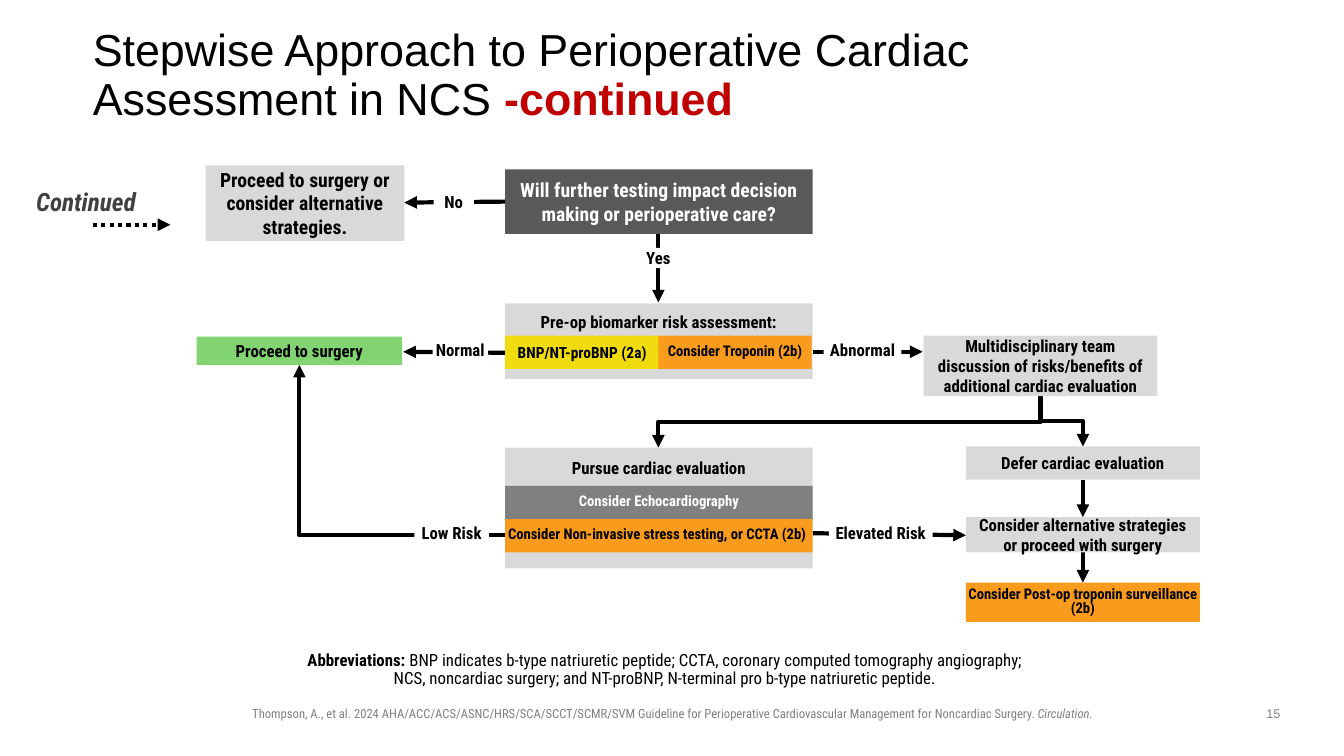
import pptx
import pptx.util
import pptx.dml.color
import pptx.enum.dml
import pptx.enum.shapes
import pptx.enum.text
import pptx.oxml.ns
from lxml import etree

Inches = pptx.util.Inches
Pt = pptx.util.Pt
RGBColor = pptx.dml.color.RGBColor
ALIGN = pptx.enum.text.PP_ALIGN
ANCHOR = pptx.enum.text.MSO_ANCHOR
CONNECTOR = pptx.enum.shapes.MSO_CONNECTOR

BLACK = RGBColor(0x00, 0x00, 0x00)
WHITE = RGBColor(0xFF, 0xFF, 0xFF)
CHARCOAL = RGBColor(0x40, 0x40, 0x40)
DARK_GRAY = RGBColor(0x59, 0x59, 0x59)
MID_GRAY = RGBColor(0x80, 0x80, 0x80)
LIGHT_GRAY = RGBColor(0xD9, 0xD9, 0xD9)
GREEN = RGBColor(0x82, 0xD4, 0x72)
YELLOW = RGBColor(0xF0, 0xDB, 0x0E)
ORANGE = RGBColor(0xF9, 0x9B, 0x1D)
RED = RGBColor(0xC0, 0x00, 0x00)

BODY_FONT = "Roboto Condensed"
TITLE_FONT = "Arial"

# Columns and rows shared by the flowchart
CENTER_X, CENTER_W = 5.01, 3.05
RIGHT_X, RIGHT_W = 9.58, 2.32
CENTER_MID = 6.53
RIGHT_MID = RIGHT_X + RIGHT_W / 2
TEAM_X = 9.16
TEAM_MID = TEAM_X + RIGHT_W / 2
BAR_H = 0.33
BIOMARKER_Y = 3.33


def style_font(font, size, color, bold=False, italic=False, name=BODY_FONT):
    font.name, font.size = name, Pt(size)
    font.color.rgb = color
    font.bold, font.italic = bold, italic


def set_margins(frame, left, top, right, bottom):
    frame.margin_left, frame.margin_top = Inches(left), Inches(top)
    frame.margin_right, frame.margin_bottom = Inches(right), Inches(bottom)


def add_styled_run(paragraph, text, *style, **options):
    run = paragraph.add_run()
    run.text = text
    style_font(run.font, *style, **options)


def add_box(slide, place, text, fill, size=12, color=BLACK, tight=False, top_inset=None):
    """Filled box; tight drops the margins, top_inset hangs the text from the top."""
    box = slide.shapes.add_shape(
        pptx.enum.shapes.MSO_SHAPE.RECTANGLE, *map(Inches, place))
    box.shadow.inherit = False
    box.fill.solid()
    box.fill.fore_color.rgb = fill
    box.line.fill.background()
    frame = box.text_frame
    frame.word_wrap = True
    frame.text = text
    frame.vertical_anchor = ANCHOR.MIDDLE
    if tight:
        set_margins(frame, 0, 0, 0, 0)
    if top_inset is not None:
        frame.vertical_anchor = ANCHOR.TOP
        frame.margin_top = Inches(top_inset)
    paragraph = frame.paragraphs[0]
    paragraph.alignment = ALIGN.CENTER
    style_font(paragraph.runs[0].font, size, color, bold=True)
    return box


def add_option(slide, place, text, fill, color=BLACK):
    """Bar with a graded recommendation, in smaller and closer type."""
    option = add_box(slide, place, text, fill, 10.5, color, tight=True)
    option.text_frame.paragraphs[0].line_spacing = 0.8


def add_label(slide, left, top, width, text):
    add_box(slide, (left, top, width, 0.2), text, WHITE, tight=True, top_inset=0)


def add_arrow(slide, start, end, kind=CONNECTOR.STRAIGHT):
    arrow = slide.shapes.add_connector(kind, *map(Inches, (*start, *end)))
    arrow.line.color.rgb = BLACK
    arrow.line.width = Pt(3)
    properties = arrow._element.spPr
    head = etree.SubElement(arrow.line._get_or_add_ln(), pptx.oxml.ns.qn("a:tailEnd"))
    head.set("type", "triangle")
    etree.SubElement(properties, pptx.oxml.ns.qn("a:effectLst"))
    return arrow


def add_drop_arrow(slide, start, end):
    """Elbow that runs down, across and down: a quarter-turned elbow connector."""
    mid_x, mid_y = (start[0] + end[0]) / 2, (start[1] + end[1]) / 2
    half_x, half_y = (end[0] - start[0]) / 2, (end[1] - start[1]) / 2
    arrow = add_arrow(slide, (mid_x - half_y, mid_y + half_x),
                      (mid_x + half_y, mid_y - half_x), CONNECTOR.ELBOW)
    arrow._element.spPr.find(pptx.oxml.ns.qn("a:xfrm")).set("rot", "5400000")


def add_corner_arrow(slide, start, end):
    """Elbow with one corner: across, then up."""
    arrow = add_arrow(slide, start, end, CONNECTOR.ELBOW)
    geometry = arrow._element.spPr.find(pptx.oxml.ns.qn("a:prstGeom"))
    geometry.set("prst", "bentConnector2")


def add_text(slide, place, align=ALIGN.CENTER):
    text_box = slide.shapes.add_textbox(*map(Inches, place))
    text_box.text_frame.word_wrap = True
    paragraph = text_box.text_frame.paragraphs[0]
    paragraph.alignment = align
    return text_box.text_frame, paragraph


def add_title(slide):
    title = slide.shapes.title
    title.left, title.top = Inches(0.92), Inches(0.4)
    title.width, title.height = Inches(9.41), Inches(0.72)
    frame = title.text_frame
    frame.word_wrap = True
    frame.auto_size = pptx.enum.text.MSO_AUTO_SIZE.NONE
    frame.vertical_anchor = ANCHOR.MIDDLE
    set_margins(frame, 0, 0, 0, 0)
    paragraph = frame.paragraphs[0]
    paragraph.alignment = ALIGN.LEFT
    paragraph.line_spacing = 0.9
    add_styled_run(paragraph, "Stepwise Approach to Perioperative Cardiac Assessment in NCS ",
                   32, BLACK, name=TITLE_FONT)
    add_styled_run(paragraph, "-continued", 32, RED, bold=True, name=TITLE_FONT)


def add_arrows(slide):
    add_arrow(slide, (CENTER_MID, 2.32), (CENTER_MID, 3))
    add_arrow(slide, (CENTER_X, 2), (4.01, 2.01))
    add_arrow(slide, (CENTER_X, 3.5), (4, 3.49))
    add_arrow(slide, (8.06, 3.49), (9.15, 3.49))
    add_arrow(slide, (8.06, 5.29), (RIGHT_X, 5.31))
    add_arrow(slide, (RIGHT_MID, 4.76), (RIGHT_MID, 5.13))
    add_arrow(slide, (RIGHT_MID, 5.48), (RIGHT_MID, 5.78))
    add_drop_arrow(slide, (TEAM_MID, 3.93), (CENTER_MID, 4.44))
    add_drop_arrow(slide, (TEAM_MID, 3.93), (RIGHT_MID, 4.43))
    add_corner_arrow(slide, (CENTER_X, 5.31), (2.97, 3.62))
    continued_arrow = add_arrow(slide, (0.92, 2.23), (1.69, 2.23))
    continued_arrow.line.dash_style = pptx.enum.dml.MSO_LINE.ROUND_DOT


def add_steps(slide):
    # Decision on further testing
    add_box(slide, (CENTER_X, 1.68, CENTER_W, 0.64),
            "Will further testing impact decision making or perioperative care?",
            DARK_GRAY, 14, WHITE)
    add_box(slide, (2.04, 1.64, 1.97, 0.75),
            "Proceed to surgery or consider alternative strategies.", LIGHT_GRAY, 14)

    # Biomarkers
    add_box(slide, (CENTER_X, 3.01, CENTER_W, 0.75), "Pre-op biomarker risk assessment:",
            LIGHT_GRAY, top_inset=0.08)
    add_box(slide, (CENTER_X, BIOMARKER_Y, 1.53, BAR_H), "BNP/NT-proBNP (2a)", YELLOW, 11)
    add_option(slide, (CENTER_MID, BIOMARKER_Y, 1.52, BAR_H), "Consider Troponin (2b)", ORANGE)
    add_box(slide, (1.95, 3.34, 2.04, 0.28), "Proceed to surgery", GREEN)
    add_box(slide, (TEAM_X, 3.33, RIGHT_W, 0.6),
            "Multidisciplinary team discussion of risks/benefits of additional cardiac evaluation",
            LIGHT_GRAY)

    # Cardiac evaluation
    add_box(slide, (CENTER_X, 4.44, CENTER_W, 1.2), "Pursue cardiac evaluation",
            LIGHT_GRAY, top_inset=0.1)
    add_option(slide, (CENTER_X, 4.82, CENTER_W, BAR_H), "Consider Echocardiography",
               MID_GRAY, WHITE)
    add_option(slide, (CENTER_X, 4.82 + BAR_H, CENTER_W, BAR_H),
               "Consider Non-invasive stress testing, or CCTA (2b) ", ORANGE)

    # Deferred evaluation
    add_box(slide, (RIGHT_X, 4.43, RIGHT_W, BAR_H), "Defer cardiac evaluation", LIGHT_GRAY)
    add_box(slide, (RIGHT_X, 5.13, RIGHT_W, 0.35),
            "Consider alternative strategies or proceed with surgery", LIGHT_GRAY)
    add_option(slide, (RIGHT_X, 5.78, RIGHT_W, 0.39),
               "Consider Post-op troponin surveillance (2b)", ORANGE)


def add_notes_and_footer(slide):
    _, continued = add_text(slide, (0.26, 1.8, 1.6, 0.4), ALIGN.LEFT)
    add_styled_run(continued, "Continued", 18, CHARCOAL, bold=True, italic=True)

    frame, abbreviations = add_text(slide, (1.88, 6.42, 9.57, 0.46))
    set_margins(frame, 0, 0.05, 0.1, 0.05)
    frame.vertical_anchor = ANCHOR.BOTTOM
    abbreviations.line_spacing = 0.9
    add_styled_run(abbreviations, "Abbreviations: ", 12, BLACK, bold=True)
    add_styled_run(abbreviations, "BNP indicates b-type natriuretic peptide; CCTA, "
                   "coronary computed tomography angiography; ", 12, BLACK)
    abbreviations.add_line_break()
    add_styled_run(abbreviations, "NCS, noncardiac surgery; and NT-proBNP, "
                   "N-terminal pro b-type natriuretic peptide. ", 12, BLACK)

    _, citation = add_text(slide, (2.36, 6.95, 8.62, 0.25))
    add_styled_run(citation, "Thompson, A., et al. 2024 AHA/ACC/ACS/ASNC/HRS/SCA/SCCT/SCMR/SVM "
                   "Guideline for Perioperative Cardiovascular Management for Noncardiac "
                   "Surgery. ", 9, MID_GRAY)
    add_styled_run(citation, "Circulation.", 9, MID_GRAY, italic=True)

    _, page_number = add_text(slide, (12.42, 6.95, 0.42, 0.26))
    add_styled_run(page_number, "15", 9, MID_GRAY, name=TITLE_FONT)


def main():
    deck = pptx.Presentation()
    deck.slide_width, deck.slide_height = Inches(13.33), Inches(7.5)
    slide = deck.slides.add_slide(deck.slide_layouts[5])
    add_title(slide)
    add_arrows(slide)
    add_steps(slide)
    for label in ((6.33, 2.46, 0.4, "Yes"), (4.3, 1.9, 0.4, "No"),
                  (4.29, 3.37, 0.55, "Normal"), (8.17, 3.37, 0.77, "Abnormal"),
                  (4.11, 5.19, 0.74, "Low Risk"), (8.22, 5.19, 1.03, "Elevated Risk")):
        add_label(slide, *label)
    add_notes_and_footer(slide)
    deck.save("out.pptx")


if __name__ == "__main__":
    main()
